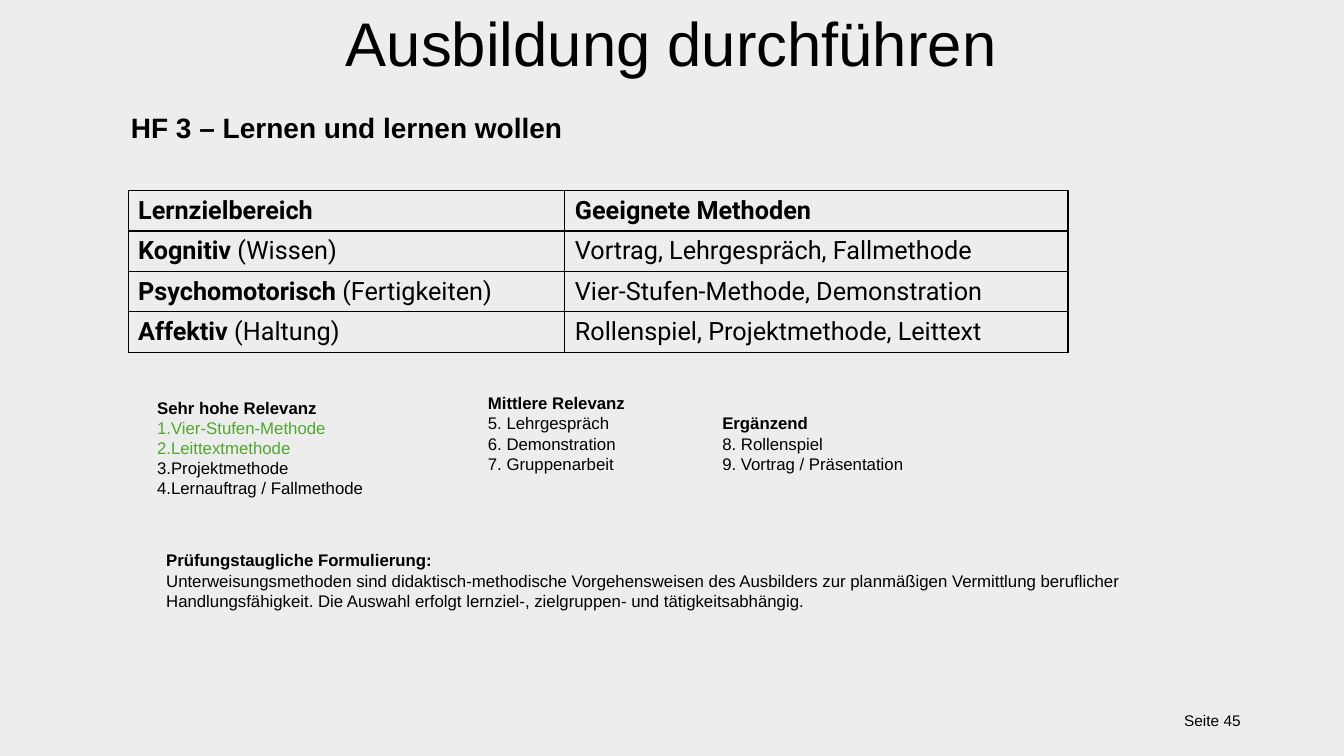
from dataclasses import dataclass
from lxml.etree import SubElement
from pptx import Presentation
from pptx.dml.color import RGBColor
from pptx.enum.text import MSO_ANCHOR, MSO_AUTO_SIZE, PP_ALIGN
from pptx.oxml.ns import qn
from pptx.util import Inches, Pt


@dataclass(frozen=True)
class Theme:
    background: str = "EDEDED"
    ink: str = "000000"
    highlight: str = "4EA72E"
    text_font: str = "Arial"
    table_font: str = "Roboto"
    title_size: int = 44
    heading_size: int = 20
    table_size: int = 18
    text_size: int = 12
    page_size: int = 11
    border: int = 1


theme = Theme()

presentation = Presentation()
presentation.slide_width = Inches(13.33)
presentation.slide_height = Inches(7.5)
column = presentation.slide_width / 160
row = presentation.slide_height / 90


def area(left, top, width, height):
    return int(left * column), int(top * row), int(width * column), int(height * row)


def write(frame, text, size=theme.text_size, bold=False, color=theme.ink,
          font=theme.text_font, align=PP_ALIGN.LEFT, bullet=None, same_line=False):
    paragraph = frame.paragraphs[-1]
    if paragraph.runs and not same_line:
        paragraph = frame.add_paragraph()
    if bullet:
        properties = paragraph._p.get_or_add_pPr()
        properties.set("marL", "0")
        properties.set("indent", "0")
        marker = SubElement(properties, qn(f"a:{bullet}"))
        if bullet == "buAutoNum":
            marker.set("type", "arabicPeriod")
    paragraph.alignment = align
    paragraph.space_before = Pt(0)
    paragraph.font.size = Pt(size)
    paragraph.font.color.rgb = RGBColor.from_string(color)
    paragraph.font.name = font
    run = paragraph.add_run()
    run.text = text
    run.font.size = Pt(size)
    run.font.bold = bold
    run.font.name = font
    run.font.color.rgb = RGBColor.from_string(color)


slide = presentation.slides.add_slide(presentation.slide_layouts[1])
slide.background.fill.solid()
slide.background.fill.fore_color.rgb = RGBColor.from_string(theme.background)

title = slide.shapes.title
title.left, title.top, title.width, title.height = area(38, 0, 83.9, 10.1)
title.text_frame.vertical_anchor = MSO_ANCHOR.TOP
title.text_frame.auto_size = MSO_AUTO_SIZE.NONE
write(title.text_frame, "Ausbildung durchführen", size=theme.title_size, align=PP_ALIGN.CENTER)

heading = slide.shapes.add_textbox(*area(14.4, 12.6, 132.6, 5.3)).text_frame
heading.word_wrap = True
write(heading, "HF 3 – Lernen und lernen wollen", size=theme.heading_size, bold=True)

page = slide.shapes.add_textbox(*area(134.4, 83.4, 14.5, 4.8)).text_frame
page.word_wrap = True
page.vertical_anchor = MSO_ANCHOR.MIDDLE
write(page, "Seite 45", size=theme.page_size, align=PP_ALIGN.RIGHT)

goals = [
    ("Lernzielbereich", "", "Geeignete Methoden"),
    ("Kognitiv", " (Wissen)", "Vortrag, Lehrgespräch, Fallmethode"),
    ("Psychomotorisch", " (Fertigkeiten)", "Vier-Stufen-Methode, Demonstration"),
    ("Affektiv", " (Haltung)", "Rollenspiel, Projektmethode, Leittext"),
]
goal_width, method_width, goal_height = 52, 59.9, 4.8
methods = slide.shapes.add_table(
    len(goals), 2, *area(15.25, 22.7, goal_width + method_width, goal_height * len(goals))
).table
methods.first_row = methods.horz_banding = False
methods.columns[0].width = int(goal_width * column)
methods.columns[1].width = int(method_width * column)

for index, (goal, detail, method) in enumerate(goals):
    goal_cell, method_cell = methods.cell(index, 0), methods.cell(index, 1)
    write(goal_cell.text_frame, goal, size=theme.table_size, bold=True, font=theme.table_font)
    if detail:
        write(goal_cell.text_frame, detail, size=theme.table_size, font=theme.table_font,
              same_line=True)
    write(method_cell.text_frame, method, size=theme.table_size, bold=index == 0,
          font=theme.table_font)

for cell in methods.iter_cells():
    cell.vertical_anchor = MSO_ANCHOR.MIDDLE
    properties = cell._tc.get_or_add_tcPr()
    for side in ("lnL", "lnR", "lnT", "lnB"):
        line = SubElement(properties, qn(f"a:{side}"), w=str(Pt(theme.border)))
        SubElement(SubElement(line, qn("a:solidFill")), qn("a:srgbClr"), val=theme.ink)
    cell.fill.background()

top_methods = slide.placeholders[1]
top_methods.left, top_methods.top, top_methods.width, top_methods.height = area(
    17.5, 46.7, 29.6, 13.3)
top_methods.text_frame.auto_size = MSO_AUTO_SIZE.NONE
write(top_methods.text_frame, "Sehr hohe Relevanz", bold=True, bullet="buNone")
for method, color in [
    ("Vier-Stufen-Methode", theme.highlight),
    ("Leittextmethode", theme.highlight),
    ("Projektmethode", theme.ink),
    ("Lernauftrag / Fallmethode", theme.ink),
]:
    write(top_methods.text_frame, method, color=color, bullet="buAutoNum")

for place, caption, entries in [
    ((56.9, 46.2, 23.2, 10.9), "Mittlere Relevanz",
     ["5. Lehrgespräch", "6. Demonstration", "7. Gruppenarbeit"]),
    ((84.8, 48.6, 28.3, 8.5), "Ergänzend",
     ["8. Rollenspiel", "9. Vortrag / Präsentation"]),
    ((18.6, 64.9, 118.2, 8.5), "Prüfungstaugliche Formulierung:",
     ["Unterweisungsmethoden sind didaktisch-methodische Vorgehensweisen des Ausbilders "
      "zur planmäßigen Vermittlung beruflicher Handlungsfähigkeit. Die Auswahl erfolgt "
      "lernziel-, zielgruppen- und tätigkeitsabhängig."]),
]:
    section = slide.shapes.add_textbox(*area(*place)).text_frame
    section.word_wrap = True
    write(section, caption, bold=True)
    for entry in entries:
        write(section, entry)

presentation.save("out.pptx")
